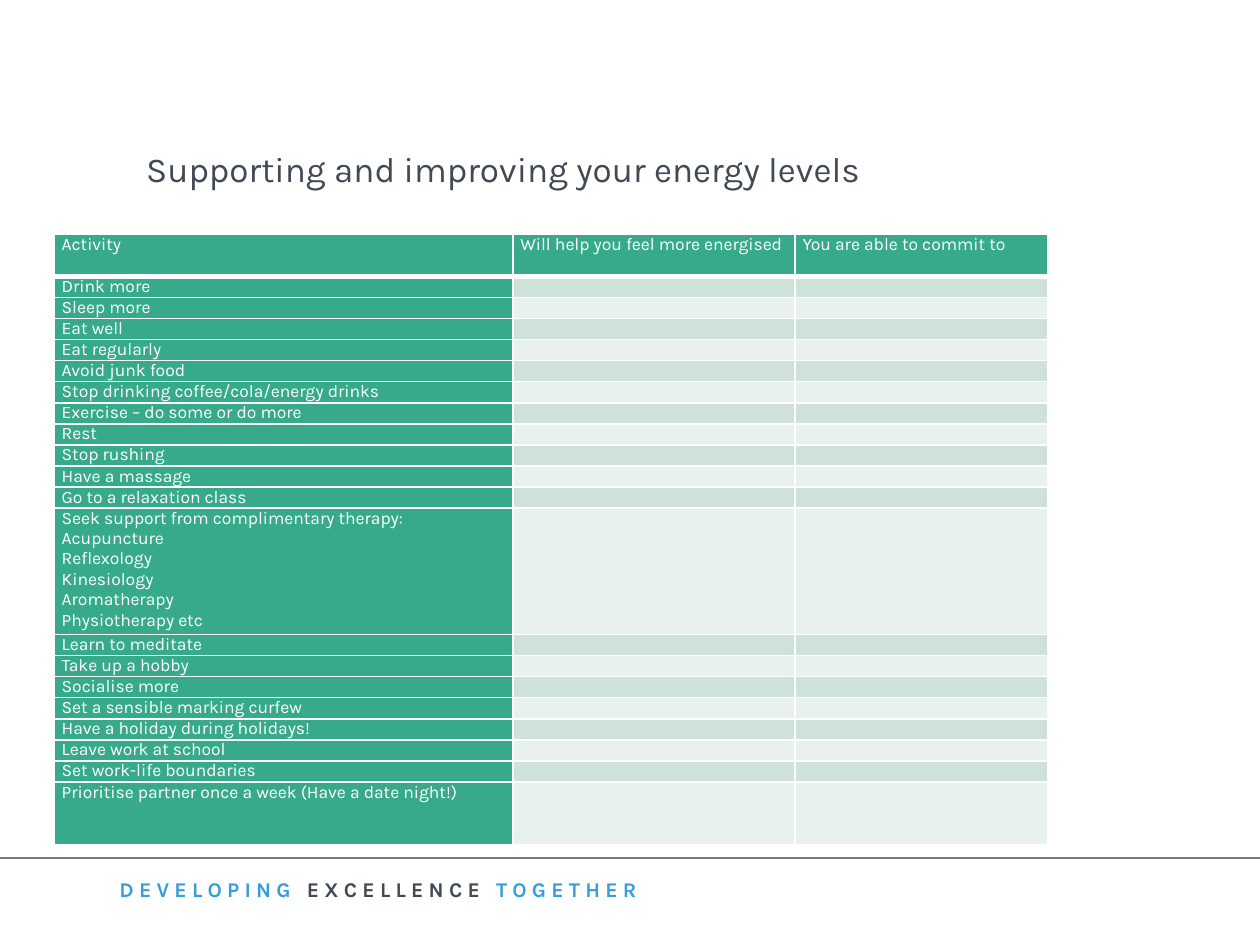
from lxml.etree import SubElement
from pptx import Presentation
from pptx.dml.color import RGBColor
from pptx.enum.shapes import MSO_CONNECTOR
from pptx.enum.text import MSO_ANCHOR, PP_ALIGN
from pptx.oxml import parse_xml
from pptx.oxml.ns import nsdecls, qn
from pptx.util import Inches, Pt

TITLE = "Supporting and improving your energy levels"
MOTTO = [("DEVELOPING", "blue"), (" EXCELLENCE ", "ink"), ("TOGETHER", "blue")]
HEADINGS = ["Activity", "Will help you feel more energised", "You are able to commit to"]
ACTIVITIES = [
    "Drink more",
    "Sleep more",
    "Eat well",
    "Eat regularly",
    "Avoid junk food",
    "Stop drinking coffee/cola/energy drinks",
    "Exercise – do some or do more",
    "Rest",
    "Stop rushing",
    "Have a massage",
    "Go to a relaxation class",
    "Seek support from complimentary therapy:\nAcupuncture\nReflexology\n"
    "Kinesiology\nAromatherapy\nPhysiotherapy etc",
    "Learn to meditate",
    "Take up a hobby",
    "Socialise more",
    "Set a sensible marking curfew",
    "Have a holiday during holidays!",
    "Leave work at school",
    "Set work-life boundaries",
    "Prioritise partner once a week (Have a date night!)",
]
COLUMN_WIDTHS = [3.64, 2.24, 2.01]
LINE_HEIGHT = 4.83 / 29
HEADER_LINES, LAST_LINES = 2, 3

THEME = {
    "font": "Karla",
    "ink": "414954", "blue": "399DDC", "rule": "787979", "white": "FFFFFF",
    "green": "38AA8C", "bands": ["CEE2DA", "E8F1EE"],
    "title_size": 20, "motto_size": 12, "cell_size": 10,
}


def color(name):
    return RGBColor.from_string(THEME[name])


def set_attributes(target, values):
    for name, value in values.items():
        setattr(target, name, value)


def style_font(font, size, color_name, bold=False):
    set_attributes(font, {"name": THEME["font"], "size": Pt(THEME[size]), "bold": bold})
    font.color.rgb = color(color_name)


def add_title(page):
    title = page.shapes.title
    set_attributes(title, {"left": Inches(1.06), "top": Inches(1.12),
                           "width": Inches(6.39), "height": Inches(0.44)})
    title.text_frame.text = TITLE
    set_attributes(title.text_frame, {"word_wrap": True, "vertical_anchor": MSO_ANCHOR.MIDDLE})
    para = title.text_frame.paragraphs[0]
    para.alignment = PP_ALIGN.LEFT
    style_font(para.runs[0].font, "title_size", "ink")


def add_footer(page):
    rule = page.shapes.add_connector(
        MSO_CONNECTOR.STRAIGHT, 0, Inches(6.81), Inches(10), Inches(6.81))
    rule.line.color.rgb = color("rule")
    rule.line.width = Pt(0.75)
    SubElement(rule._element.spPr, qn("a:effectLst"))

    box = page.shapes.add_textbox(Inches(0.85), Inches(6.91), Inches(5.44), Inches(0.44))
    box.text_frame.word_wrap = True
    para = box.text_frame.paragraphs[0]
    for text, color_name in MOTTO:
        span = para.add_run()
        span.text = text
        style_font(span.font, "motto_size", color_name, bold=True)
        span._r.get_or_add_rPr().set("spc", "300")


def set_borders(cell, bottom):
    properties = cell._tc.get_or_add_tcPr()
    widths = {"lnL": 1, "lnR": 1, "lnT": 1, "lnB": bottom}
    for position, (side, width) in enumerate(widths.items()):
        properties.insert(position, parse_xml(
            f'<a:{side} {nsdecls("a")} w="{Pt(width)}"><a:solidFill>'
            f'<a:srgbClr val="{THEME["white"]}"/></a:solidFill></a:{side}>'))


def fill_cell(cell, text, fill, bottom):
    set_attributes(cell, {"margin_left": Inches(0.06), "margin_right": Inches(0.06),
                          "margin_top": 0, "margin_bottom": 0, "text": text})
    set_borders(cell, bottom)
    cell.fill.solid()
    cell.fill.fore_color.rgb = RGBColor.from_string(fill)
    for para in cell.text_frame.paragraphs:
        for span in para.runs:
            style_font(span.font, "cell_size", "white")
        if not para.runs:  # keeps an empty row as low as a line of text
            end = SubElement(para._p, qn("a:endParaRPr"), sz=str(THEME["cell_size"] * 100))
            SubElement(end, qn("a:latin"), typeface=THEME["font"])


def add_activity_table(page):
    rows = [HEADINGS] + [[activity, "", ""] for activity in ACTIVITIES]
    lines = [HEADER_LINES] + [activity.count("\n") + 1 for activity in ACTIVITIES]
    lines[-1] = LAST_LINES
    table = page.shapes.add_table(
        len(rows), len(COLUMN_WIDTHS), Inches(0.43), Inches(1.86),
        Inches(sum(COLUMN_WIDTHS)), Inches(LINE_HEIGHT * sum(lines))).table
    for column, width in zip(table.columns, COLUMN_WIDTHS):
        column.width = Inches(width)
    for r, texts in enumerate(rows):
        table.rows[r].height = Inches(LINE_HEIGHT * lines[r])
        for c, text in enumerate(texts):
            is_heading = r == 0 or c == 0
            fill = THEME["green"] if is_heading else THEME["bands"][(r - 1) % 2]
            fill_cell(table.cell(r, c), text, fill, bottom=3 if r == 0 else 1)


def main():
    deck = Presentation()
    set_attributes(deck, {"slide_width": Inches(10), "slide_height": Inches(7.5)})
    page = deck.slides.add_slide(deck.slide_layouts[5])
    add_footer(page)
    add_title(page)
    add_activity_table(page)
    deck.save("out.pptx")


if __name__ == "__main__":
    main()
